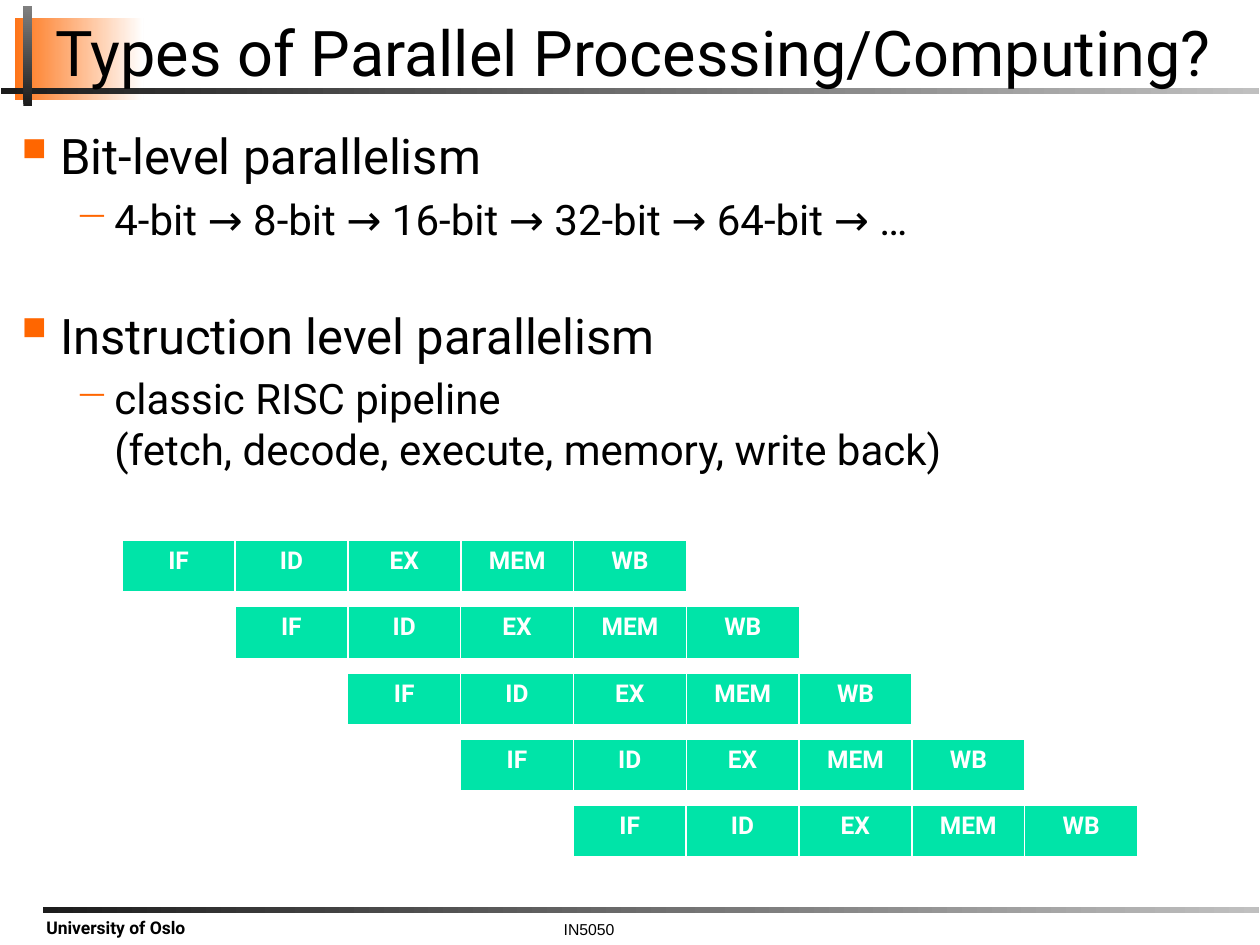
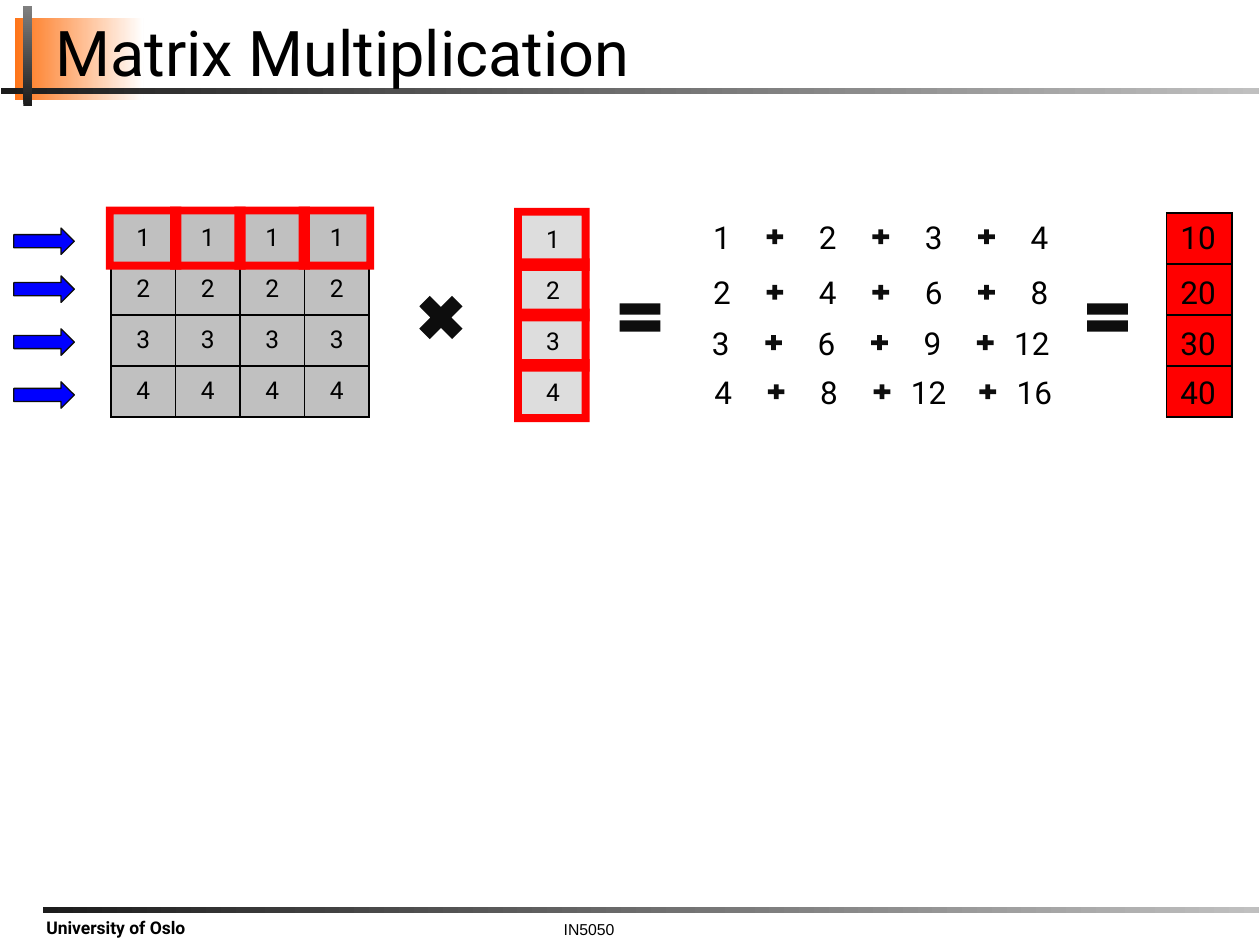
from pptx import Presentation, util as u
from pptx.dml.color import RGBColor
from pptx.enum import shapes, text
from pptx.oxml import parse_xml
from pptx.oxml.ns import nsdecls

HUE = {
    "black": "000000", "white": "FFFFFF", "ink": "0D0D0D", "dark": "1C1C1C",
    "gray": "808080", "silver": "C0C0C0", "pale": "DDDDDD", "glow": "FE7519",
    "orange": "FF6600", "mint": "00E4A8", "red": "FF0000", "blue": "0000FF",
}
RGB = {name: RGBColor.from_string(code) for name, code in HUE.items()}
SHAPE = shapes.MSO_SHAPE
MID = text.PP_ALIGN.CENTER


def write(slide, words, at, size, face="Roboto", bold=False, align=MID, inset=0.05):
    box = slide.shapes.add_textbox(*map(u.Inches, at))
    frame = box.text_frame
    frame.word_wrap = True
    frame.margin_top = u.Inches(inset)
    para = frame.paragraphs[0]
    para.text = words
    para.alignment = align
    para.font.size = u.Pt(size)
    para.font.name = face
    para.font.bold = bold
    para.font.color.rgb = RGB["black"]
    return frame


def grid(slide, rows, at, fill, ink, edge, bold=False, anchor=text.MSO_ANCHOR.MIDDLE):
    frame = slide.shapes.add_table(len(rows), len(rows[0]), *map(u.Inches, at))
    table = frame.table
    table.first_row = table.horz_banding = False
    for r, row in enumerate(rows):
        for c, words in enumerate(row):
            cell = table.cell(r, c)
            for side in "LRTB":
                cell._tc.get_or_add_tcPr().append(parse_xml(
                    f'<a:ln{side} {nsdecls("a")} w="12700"><a:solidFill>'
                    f'<a:srgbClr val="{HUE[edge]}"/></a:solidFill></a:ln{side}>'))
            cell.fill.solid()
            cell.fill.fore_color.rgb = RGB[fill]
            cell.vertical_anchor = anchor
            para = cell.text_frame.paragraphs[0]
            para.text = words
            para.alignment = MID
            para.font.size = u.Pt(14)
            para.font.name = "Roboto"
            para.font.bold = bold
            para.font.color.rgb = RGB[ink]


deck = Presentation()
deck.slide_width = u.Inches(10)
deck.slide_height = u.Inches(7.5)

bands = [
    ((0.12, 0.14, 1.02, 0.65), "glow", "white", 0),
    ((0.01, 0.7, 9.98, 0.05), "dark", "silver", 0),
    ((-0.18, 0.41, 0.8, 0.07), "dark", "gray", 270),
    ((0.34, 7.2, 9.65, 0.05), "dark", "silver", 0),
]
for title in ("Types of Parallel Processing/Computing?", "Matrix Multiplication"):
    slide = deck.slides.add_slide(deck.slide_layouts[6])
    for at, start, end, turn in bands:
        band = slide.shapes.add_shape(SHAPE.RECTANGLE, *map(u.Inches, at))
        band.shadow.inherit = False
        band.rotation = turn
        band.line.fill.background()
        band.fill.gradient()
        band.fill.gradient_angle = 0
        for stop, hue in zip(band.fill.gradient_stops, (start, end)):
            stop.color.rgb = RGB[hue]
    write(slide, "IN5050", (1.82, 7.27, 5.71, 0.23), 9, "Arial", inset=0.03)
    write(slide, "University of Oslo", (0.27, 7.25, 1.63, 0.24), 10,
          bold=True, align=text.PP_ALIGN.LEFT, inset=0.03)
    head = write(slide, title, (0.34, 0.14, 9.62, 0.61), 36, align=text.PP_ALIGN.LEFT)
    head.vertical_anchor = text.MSO_ANCHOR.BOTTOM
    head.margin_right = u.Inches(0.04)
    head.paragraphs[0].line_spacing = 0.8

types, matrix = deck.slides

points = [
    (0, 0, "Bit-level parallelism"),
    (1, 5, "4-bit → 8-bit → 16-bit → 32-bit → 64-bit → …"),
    (0, 35, "Instruction level parallelism"),
    (1, 5, "classic RISC pipeline\v(fetch, decode, execute, memory, write back)"),
]
styles = [(28, 0.38, 0.38, "▪", 120), (24, 0.81, 0.31, "−", 100)]
box = types.shapes.add_textbox(0, u.Inches(0.95), u.Inches(10), u.Inches(6.18))
body = box.text_frame
body.word_wrap = True
for n, (level, gap, words) in enumerate(points):
    size, left, hang, mark, scale = styles[level]
    para = body.add_paragraph() if n else body.paragraphs[0]
    para.text = words
    para.level = level
    props = para._p.get_or_add_pPr()
    props.set("marL", str(u.Inches(left)))
    props.set("indent", str(-u.Inches(hang)))
    for tag in (f'buClr {nsdecls("a")}><a:srgbClr val="{HUE["orange"]}"/></a:buClr',
                f'buSzPct {nsdecls("a")} val="{scale * 1000}"/',
                f'buChar {nsdecls("a")} char="{mark}"/'):
        props.append(parse_xml(f"<a:{tag}>"))
    para.space_before = u.Pt(gap)
    para.font.size = u.Pt(size)
    para.font.name = "Roboto"
    para.font.color.rgb = RGB["black"]

stages = ["IF", "ID", "EX", "MEM", "WB"]
for n in range(5):
    grid(types, [stages], (0.97 + 0.895 * n, 4.29 + 0.525 * n, 4.48, 0.41),
         "mint", "white", "white", True, text.MSO_ANCHOR.TOP)

digits = range(1, 5)
grid(matrix, [[str(n)] * 4 for n in digits], (0.88, 1.69, 2.05, 1.62),
     "silver", "black", "black")
grid(matrix, [[str(n)] for n in digits], (4.13, 1.7, 0.52, 1.62),
     "pale", "black", "black")
grid(matrix, [[""]] * 4, (9.26, 1.69, 0.52, 1.62), "red", "black", "black")

marks = [
    (SHAPE.MATH_MULTIPLY, (3.25, 2.27, 0.5, 0.5), "ink"),
    (SHAPE.MATH_EQUAL, (4.86, 2.33, 0.44, 0.38), "ink"),
    (SHAPE.MATH_EQUAL, (8.57, 2.33, 0.44, 0.38), "ink"),
]
for n in range(4):
    marks.append((SHAPE.FRAME, (0.84 + 0.51 * n, 1.64, 0.6, 0.5), "red"))
    marks.append((SHAPE.FRAME, (4.08, 1.65 + 0.4 * n, 0.6, 0.5), "red"))
for top in (1.81, 2.19, 2.61, 3.03):
    marks.append((SHAPE.RIGHT_ARROW, (0.11, top, 0.48, 0.21), "blue"))

sums = [(5.53, 1.68), (5.53, 2.12), (5.52, 2.52), (5.54, 2.91)]
for row, (left, top) in zip(digits, sums):
    for col in digits:
        term = row * col
        wide = 0.5 if term > 9 else 0.4
        edge = left + 0.4 + 0.84 * (col - 1)
        write(matrix, str(term), (edge - wide, top, wide, 0.4), 18)
        if col < 4:
            marks.append((SHAPE.MATH_PLUS, (edge + 0.13, top + 0.12, 0.18, 0.16), "ink"))
    write(matrix, str(row * 10), (9.26, top, 0.5, 0.4), 18)

for kind, at, hue in marks:
    mark = matrix.shapes.add_shape(kind, *map(u.Inches, at))
    mark.shadow.inherit = False
    mark.fill.solid()
    mark.fill.fore_color.rgb = RGB[hue]
    if kind == SHAPE.RIGHT_ARROW:
        mark.line.color.rgb = RGB["ink"]
        mark.line.width = u.Pt(0.75)
    else:
        mark.line.fill.background()

deck.save("out.pptx")
